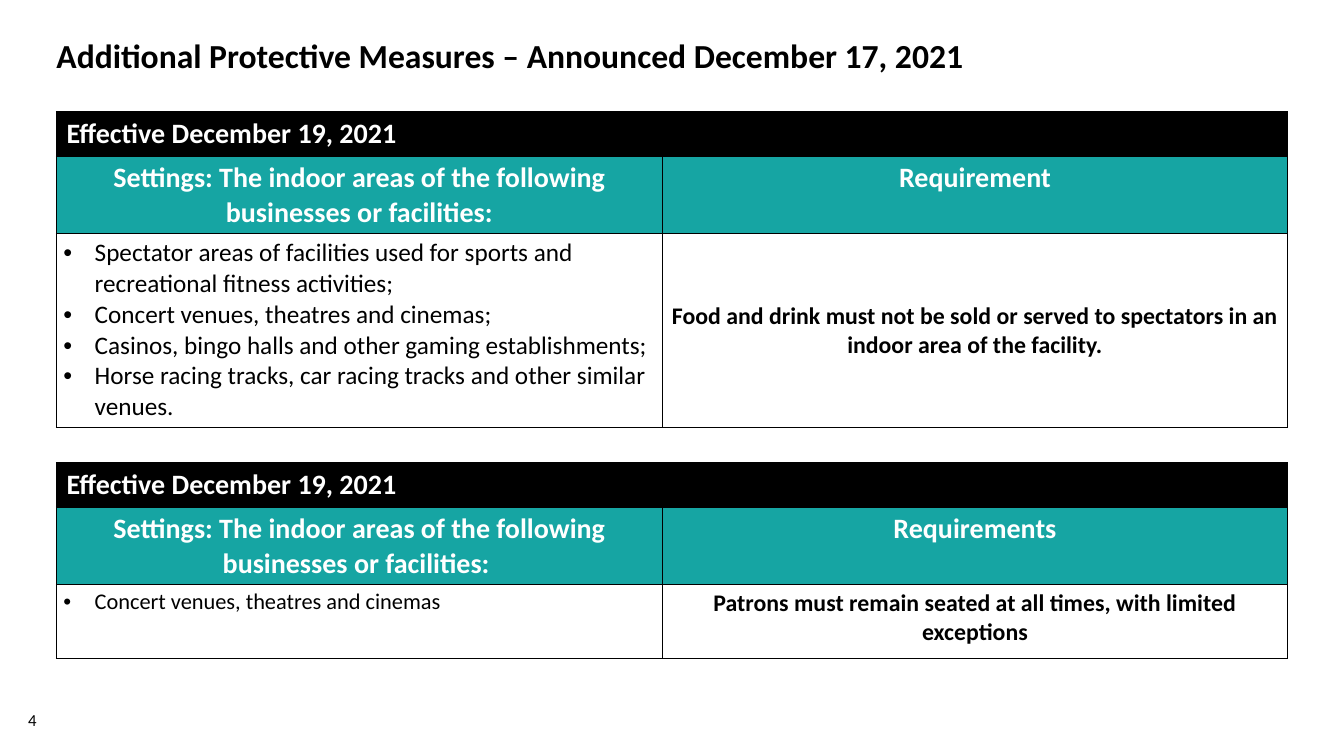
from lxml import etree
from pptx import Presentation
from pptx.dml.color import RGBColor
from pptx.enum.text import MSO_ANCHOR, PP_ALIGN
from pptx.oxml.ns import qn
from pptx.util import Inches, Pt

TOP, MIDDLE = MSO_ANCHOR.TOP, MSO_ANCHOR.MIDDLE
LEFT, CENTER = PP_ALIGN.LEFT, PP_ALIGN.CENTER
BLACK, WHITE, TEAL = "000000", "FFFFFF", "16A5A3"


def style(paragraph, size, color, bold, align):
    paragraph.alignment = align
    font = paragraph.font
    font.name = "Calibri"
    font.size = Pt(size)
    font.bold = bold
    font.color.rgb = RGBColor.from_string(color)


def fill_cell(cell, lines, size, color, bold, align, anchor, fill=None, bullets=False):
    cell.vertical_anchor = anchor
    properties = cell._tc.get_or_add_tcPr()
    for side in ("a:lnL", "a:lnR", "a:lnT", "a:lnB"):
        border = etree.SubElement(properties, qn(side), w=str(Pt(1)))
        ink = etree.SubElement(border, qn("a:solidFill"))
        etree.SubElement(ink, qn("a:srgbClr"), val=BLACK)
    if fill:
        cell.fill.solid()
        cell.fill.fore_color.rgb = RGBColor.from_string(fill)
    else:
        cell.fill.background()
        cell.margin_left = cell.margin_right = Inches(0.07)
        cell.margin_top = cell.margin_bottom = Inches(0.04)
    cell.text = "\n".join(lines)
    for paragraph in cell.text_frame.paragraphs:
        if bullets:
            indent = paragraph._p.get_or_add_pPr()
            indent.set("marL", str(Inches(0.31)))
            indent.set("indent", str(Inches(-0.31)))
            etree.SubElement(indent, qn("a:buFont"), typeface="Arial")
            etree.SubElement(indent, qn("a:buChar"), char="•")
        style(paragraph, size, color, bold, align)


deck = Presentation()
deck.slide_width = Inches(13.33)
deck.slide_height = Inches(7.5)
page = deck.slides.add_slide(deck.slide_layouts[5])

title = page.shapes.title
title.left, title.top = Inches(0.46), Inches(0.34)
title.width, title.height = Inches(12.62), Inches(0.56)
title.text_frame.text = "Additional Protective Measures – Announced December 17, 2021"
title.text_frame.vertical_anchor = TOP
heading = title.text_frame.paragraphs[0]
heading.line_spacing = 0.9
style(heading, 24, BLACK, True, LEFT)

number = page.shapes.add_textbox(Inches(0.18), Inches(6.94), Inches(0.56), Inches(0.4))
number.text_frame.word_wrap = True
number.text_frame.vertical_anchor = MIDDLE
number.text_frame.text = "4"
style(number.text_frame.paragraphs[0], 12, BLACK, False, LEFT)

settings_heading = "Settings: The indoor areas of the following businesses or facilities:"
measures = [
    {
        "top": 1.11,
        "body_height": 1.92,
        "headings": [settings_heading, "Requirement"],
        "settings": [
            "Spectator areas of facilities used for sports and recreational fitness activities;",
            "Concert venues, theatres and cinemas;",
            "Casinos, bingo halls and other gaming establishments;",
            "Horse racing tracks, car racing tracks and other similar venues.",
        ],
        "settings_size": 18,
        "requirement": "Food and drink must not be sold or served to spectators in an indoor area of the facility.",
        "anchor": MIDDLE,
    },
    {
        "top": 4.59,
        "body_height": 0.73,
        "headings": [settings_heading + " ", "Requirements"],
        "settings": ["Concert venues, theatres and cinemas"],
        "settings_size": 16,
        "requirement": "Patrons must remain seated at all times, with limited exceptions",
        "anchor": TOP,
    },
]

for measure in measures:
    heights = [0.44, 0.77, measure["body_height"]]
    frame = page.shapes.add_table(
        3, 2, Inches(0.56), Inches(measure["top"]), Inches(12.21), Inches(sum(heights))
    )
    table = frame.table
    table.first_row = table.horz_banding = False
    for column, width in zip(table.columns, (6.01, 6.2)):
        column.width = Inches(width)
    for row, height in zip(table.rows, heights):
        row.height = Inches(height)

    table.cell(0, 0).merge(table.cell(0, 1))
    for column, text in enumerate(["Effective December 19, 2021", ""]):
        fill_cell(table.cell(0, column), [text], 20, WHITE, True, LEFT, TOP, BLACK)
    for column, text in enumerate(measure["headings"]):
        fill_cell(table.cell(1, column), [text], 20, WHITE, True, CENTER, TOP, TEAL)
    fill_cell(
        table.cell(2, 0), measure["settings"], measure["settings_size"],
        BLACK, False, LEFT, TOP, bullets=True,
    )
    fill_cell(
        table.cell(2, 1), [measure["requirement"]], 17,
        BLACK, True, CENTER, measure["anchor"],
    )

deck.save("out.pptx")
